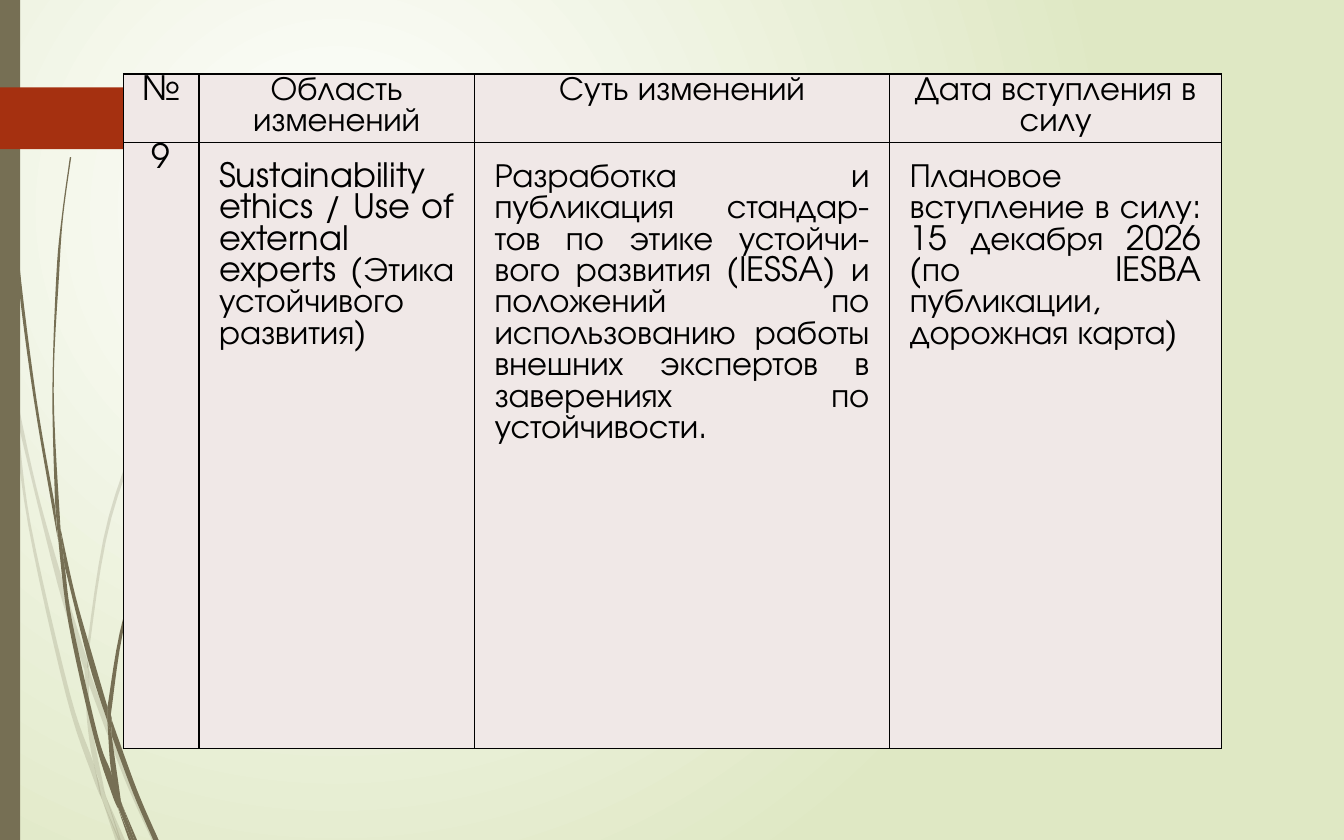
from lxml.etree import SubElement
from pptx import Presentation
from pptx.dml.color import RGBColor
from pptx.enum.shapes import MSO_SHAPE
from pptx.enum.text import PP_ALIGN
from pptx.oxml import parse_xml
from pptx.oxml.ns import nsdecls, qn
from pptx.util import Cm, Pt

INCH = 2.54
OLIVE, RED, ROSE, BLACK = "766F54", "A53010", "F0E8E7", "000000"
FONT = "TeX Gyre Adventor"

PALE_WISPS = [
    ([(.11, 2.88), (.27, 3.62), (.47, 4.33), (.64, 4.88)], [(.63, 4.99), (.43, 4.35), (.13, 3.13)]),
    ([(.66, 4.96), (.69, 5.06), (.95, 5.76), (1.16, 6.25)], [(1.13, 6.25), (.92, 5.78), (.66, 5.09)]),
    ([(.79, 5.93), (.93, 6.25)], [(.89, 6.25)]),
    ([(.08, 2.92), (.13, 3.13), (.23, 3.91), (.52, 5.16), (.7, 5.69), (.76, 5.95)],
     [(.76, 5.95), (.69, 5.78), (.49, 5.17), (.21, 3.91), (.08, 2.92)]),
    ([(.63, 4.99), (.65, 5.38), (.7, 5.69), (.79, 5.93)], [(.78, 5.89), (.68, 5.38), (.66, 5.07)]),
    ([(.66, 4.96), (.66, 4.86), (.83, 3.85), (1.2, 2.91), (1.71, 2.04), (2.34, 1.28)],
     [(2.34, 1.27), (1.71, 2.04), (1.18, 2.9), (.81, 3.84), (.64, 4.86)]),
    ([(.76, 5.95), (.86, 6.25)], [(.89, 6.25)]),
    ([(.64, 4.88), (.66, 4.96), (.66, 5.09)], [(.66, 5.07), (.63, 4.99)]),
    ([(.7, 5.69), (.72, 5.77), (.79, 5.93), (.9, 6.25)], [(.88, 6.25), (.76, 5.95), (.74, 5.89)]),
]
DARK_WISPS = [
    ([(.02, 0), (.05, .91), (.12, 1.94), (.25, 2.96), (.43, 4.01)],
     [(.41, 3.77), (.27, 2.96), (.14, 1.93), (.06, .91), (.03, 0)]),
    ([(.45, 3.93), (.56, 4.43), (.7, 4.92), (.8, 5.26)], [(.8, 5.37), (.66, 4.93), (.48, 4.21)]),
    ([(.83, 5.34), (.85, 5.41), (1.02, 5.88), (1.18, 6.25)], [(1.14, 6.25), (.99, 5.9), (.83, 5.47)]),
    ([(.43, 3.98), (.48, 4.21), (.54, 4.64), (.73, 5.48), (.83, 5.76), (.88, 6.02)],
     [(.88, 6.02), (.83, 5.9), (.7, 5.49), (.51, 4.64), (.43, 3.98)]),
    ([(.45, 3.93), (.4, 2.91), (.44, 2.04), (.47, 1.61), (.53, 1.17)],
     [(.52, 1.17), (.46, 1.61), (.42, 2.04), (.39, 2.91), (.41, 3.74)]),
    ([(.91, 5.99), (1.02, 6.25)], [(1, 6.25)]),
    ([(.41, 3.74), (.45, 3.93), (.48, 4.21)], [(.43, 3.98)]),
    ([(.83, 5.34), (.83, 5.28), (.94, 4.6), (1.19, 3.97), (1.53, 3.39), (1.96, 2.87)],
     [(1.95, 2.87), (1.53, 3.38), (1.17, 3.95), (.92, 4.59), (.8, 5.26)]),
    ([(.88, 6.02), (.96, 6.25)], [(.98, 6.25)]),
    ([(.8, 5.37), (.83, 5.76), (.91, 5.99)], [(.9, 5.96), (.83, 5.47)]),
    ([(.8, 5.26), (.83, 5.34), (.83, 5.47)], [(.8, 5.37)]),
    ([(.83, 5.76), (.87, 5.88), (.91, 5.99), (1, 6.25)], [(.98, 6.25), (.88, 6.01), (.87, 5.98)]),
]
HEADINGS = ["№", "Область изменений", "Суть изменений", "Дата вступления в силу"]
DETAILS = [
    "9",
    "Sustainability ethics / Use of external experts (Этика устойчивого развития)",
    "Разработка и публикация стандар-тов по этике устойчи-вого развития (IESSA) и положений "
    "по использованию работы внешних экспертов в заверениях по устойчивости.",
    "Плановое вступление в силу: 15 декабря 2026 (по IESBA публикации, дорожная карта)",
]


def inches(value):
    return Cm(value * INCH)


def paint(fill, colour):
    fill.solid()
    fill.fore_color.rgb = RGBColor.from_string(colour)


def finish(shape, colour, alpha=100):
    shape.shadow.inherit = False
    paint(shape.fill, colour)
    shape.line.fill.background()
    if alpha < 100:
        tone = shape.fill._xPr.find(".//" + qn("a:srgbClr"))
        SubElement(tone, qn("a:alpha"), val=str(alpha * 1000))


def smooth(points, steps=6):
    padded = [points[0], *points, points[-1]]
    curve = []
    for a, b, c, d in zip(padded, padded[1:], padded[2:], padded[3:]):
        for step in range(steps):
            t = step / steps
            curve.append(tuple(
                q + t / 2 * (r - p + t * (2 * p - 5 * q + 4 * r - s + t * (3 * (q - r) + s - p)))
                for p, q, r, s in zip(a, b, c, d)))
    return curve + [points[-1]]


def add_outline(page, box, points, colour, alpha=100):
    left, top = box
    corners = [(inches(left + x), inches(top + y)) for x, y in points]
    builder = page.shapes.build_freeform(*corners[0])
    builder.add_line_segments(corners[1:], close=True)
    finish(builder.convert_to_shape(), colour, alpha)


def add_background(page):
    page.element.cSld.insert(0, parse_xml(
        f'<p:bg {nsdecls("p", "a")}><p:bgPr><a:gradFill rotWithShape="1"><a:gsLst>'
        '<a:gs pos="0"><a:srgbClr val="FFFFFF"/></a:gs>'
        '<a:gs pos="100000"><a:srgbClr val="DFE8C4"/></a:gs></a:gsLst>'
        '<a:path path="circle"><a:fillToRect l="50000" t="50000" r="100000" b="100000"/>'
        '</a:path></a:gradFill><a:effectLst/></p:bgPr></p:bg>'))


def add_side_decoration(page, box):
    left, top, width, height = box
    for wisps, alpha in ((PALE_WISPS, 20), (DARK_WISPS, 100)):
        for outward, back in wisps:
            add_outline(page, (left, top), smooth(outward) + smooth(back), OLIVE, alpha)
    bar = page.shapes.add_shape(MSO_SHAPE.RECTANGLE, *map(inches, box))
    finish(bar, OLIVE)
    arrow = [(0, 0), (1.1, 0), (1.3, .22), (1.3, .25), (1.1, .46), (0, .46)]
    add_outline(page, (left, top + .65), arrow, RED)


def add_borders(cell):
    properties = cell._tc.get_or_add_tcPr()
    for index, side in enumerate(("lnL", "lnR", "lnT", "lnB")):
        properties.insert(index, parse_xml(
            f'<a:{side} {nsdecls("a")} w="12700"><a:solidFill>'
            f'<a:srgbClr val="{BLACK}"/></a:solidFill></a:{side}>'))


def fill_cell(cell, text, align, margin):
    paint(cell.fill, ROSE)
    add_borders(cell)
    cell.margin_left = cell.margin_right = cell.margin_top = inches(margin)
    cell.margin_bottom = inches(margin if margin > .1 else 0)
    para = cell.text_frame.paragraphs[0]
    para.alignment = align
    para.line_spacing = Pt(16.8)
    span = para.add_run()
    span.text = text
    span.font.size = Pt(18)
    span.font.name = FONT
    span.font.bold = False
    span.font.color.rgb = RGBColor.from_string(BLACK)


def add_changes_table(page, box):
    widths, heights = [.56, 2.05, 3.09, 2.47], [.51, 4.51]
    frame = page.shapes.add_table(len(heights), len(widths), *map(inches, box))
    table = frame.table
    table.horz_banding = False
    for column, width in zip(table.columns, widths):
        column.width = inches(width)
    for row, height in zip(table.rows, heights):
        row.height = inches(height)
    for row_index, texts in enumerate((HEADINGS, DETAILS)):
        for column_index, text in enumerate(texts):
            body = row_index > 0 and column_index > 0
            fill_cell(table.cell(row_index, column_index), text,
                      PP_ALIGN.JUSTIFY if body else PP_ALIGN.CENTER, .15 if body else .01)


def main():
    deck = Presentation()
    deck.slide_width, deck.slide_height = inches(10), inches(6.25)
    page = deck.slides.add_slide(deck.slide_layouts[6])
    add_background(page)
    add_side_decoration(page, (0, 0, .15, 6.25))
    add_changes_table(page, (.92, .55, 8.17, 5.02))
    deck.save("out.pptx")


if __name__ == "__main__":
    main()
